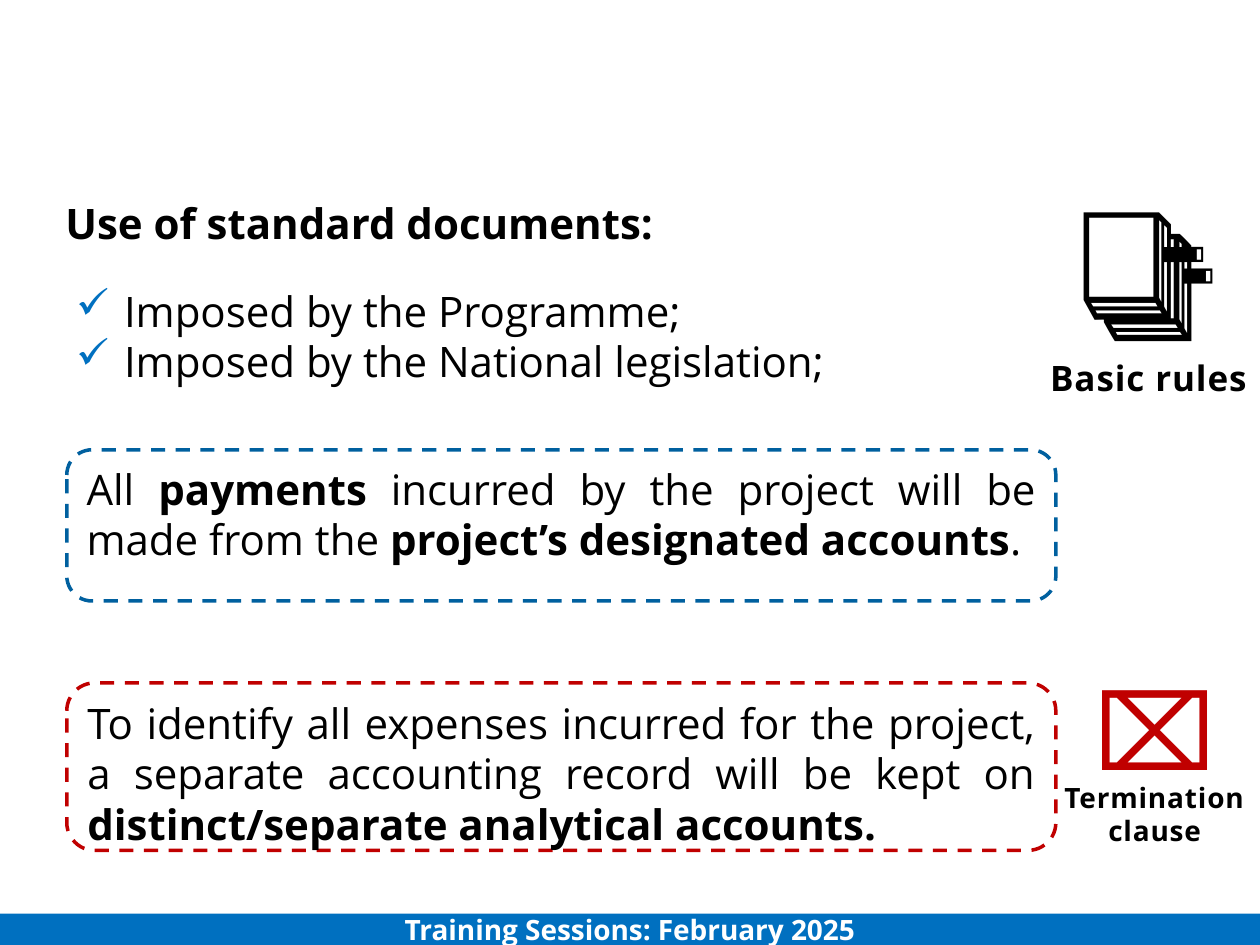
import pptx
import pptx.util
import pptx.dml.color
import pptx.enum.dml
import pptx.enum.shapes
import pptx.enum.text
import pptx.oxml
import pptx.oxml.ns

Inches = pptx.util.Inches
Align = pptx.enum.text.PP_ALIGN
Anchor = pptx.enum.text.MSO_ANCHOR
Shape = pptx.enum.shapes.MSO_SHAPE
NS = pptx.oxml.ns.nsdecls("a")


def rgb(value):
    return pptx.dml.color.RGBColor.from_string(value)


class Deck:
    font = "Open Sans"
    ink = "000000"
    blue = "0070C0"
    navy = "00609F"
    red = "C00000"
    white = "FFFFFF"

    def __init__(self, prs):
        self.s = prs.slides.add_slide(prs.slide_layouts[6])

    def add_runs(self, p, runs, size, align, color=None, font=None):
        p.alignment = align
        for text, bold in runs:
            r = p.add_run()
            r.text = text
            style = {"name": font or self.font, "size": pptx.util.Pt(size), "bold": bold}
            for key, value in style.items():
                setattr(r.font, key, value)
            r.font.color.rgb = rgb(color or self.ink)

    def frame(self, sp, anchor):
        tf = sp.text_frame
        for key, value in {"word_wrap": True, "vertical_anchor": anchor}.items():
            setattr(tf, key, value)
        return tf

    def text(self, at, text, size, align=Align.CENTER, anchor=Anchor.MIDDLE,
             bold=True, color=None, font=None):
        sp = self.s.shapes.add_textbox(*map(Inches, at))
        p = self.frame(sp, anchor).paragraphs[0]
        self.add_runs(p, [(text, bold)], size, align, color, font)
        return p

    def icon(self, at, text, size, color):
        self.text(at, text, size, anchor=Anchor.TOP, bold=False, color=color, font="Arial")

    def caption(self, at, text, size, outline):
        p = self.text(at, text, size)
        rPr = p.runs[0]._r.get_or_add_rPr()
        rPr.set("spc", "50")
        rPr.insert(0, pptx.oxml.parse_xml(
            f'<a:ln {NS} w="11430"><a:solidFill><a:srgbClr val="{outline}"/></a:solidFill></a:ln>'))

    def shape(self, kind, at, fill=None, line=None, anchor=Anchor.TOP):
        sp = self.s.shapes.add_shape(kind, *map(Inches, at))
        sp.shadow.inherit = False
        if fill:
            sp.fill.solid()
            sp.fill.fore_color.rgb = rgb(fill)
        else:
            sp.fill.background()
        if line:
            sp.line.color.rgb = rgb(line)
            sp.line.width = pptx.util.Pt(2)
            sp.line.dash_style = pptx.enum.dml.MSO_LINE.DASH
        else:
            sp.line.fill.background()
        return self.frame(sp, anchor)

    def footer(self, at, text):
        tf = self.shape(Shape.RECTANGLE, at, self.blue, anchor=Anchor.MIDDLE)
        self.add_runs(tf.paragraphs[0], [(text, True)], 16, Align.CENTER, self.white)

    def panel(self, at, runs, line, fill=None):
        tf = self.shape(Shape.ROUNDED_RECTANGLE, at, fill, line)
        self.add_runs(tf.paragraphs[0], runs, 24, Align.JUSTIFY)

    def checklist(self, at, items):
        tf = self.shape(Shape.ROUNDED_RECTANGLE, at)
        for i, item in enumerate(items):
            p = tf.add_paragraph() if i else tf.paragraphs[0]
            pPr = p._p.get_or_add_pPr()
            indent = Inches(0.38)
            pPr.set("marL", str(indent))
            pPr.set("indent", str(-indent))
            for xml in (f'<a:buClr {NS}><a:srgbClr val="{self.blue}"/></a:buClr>',
                        f'<a:buChar {NS} char="✓"/>'):
                pPr.append(pptx.oxml.parse_xml(xml))
            self.add_runs(p, [(item, False)], 24, Align.JUSTIFY)


def main():
    prs = pptx.Presentation()
    prs.slide_width, prs.slide_height = Inches(10), Inches(7.5)
    d = Deck(prs)
    d.footer((0, 7.25, 10, 0.25), "Training Sessions: February 2025")
    d.icon((8.42, 1.36, 1.39, 1.4), "📑", 80, d.ink)
    d.checklist((0.44, 2.15, 6.61, 1.35),
                ["Imposed by the Programme;", "Imposed by the National legislation;"])
    d.caption((8.23, 2.71, 1.77, 0.58), "Basic rules", 20, d.ink)
    d.text((0.42, 1.48, 6.77, 0.58), "Use of standard documents:", 24, Align.LEFT)
    d.panel((0.53, 5.42, 7.85, 1.33), [
        ("To identify all expenses incurred for the project, "
         "a separate accounting record will be kept on ", False),
        ("distinct/separate analytical accounts.", True),
    ], d.red, d.white)
    d.icon((8.48, 5.23, 1.38, 1.1), "⌧", 60, d.red)
    d.caption((8.33, 6.17, 1.67, 0.58), "Termination clause", 16, d.red)
    d.panel((0.53, 3.57, 7.85, 1.2), [
        ("All ", False),
        ("payments", True),
        (" incurred by the project will be made from the ", False),
        ("project’s designated accounts", True),
        (".", False),
    ], d.navy)
    prs.save("out.pptx")


if __name__ == "__main__":
    main()
